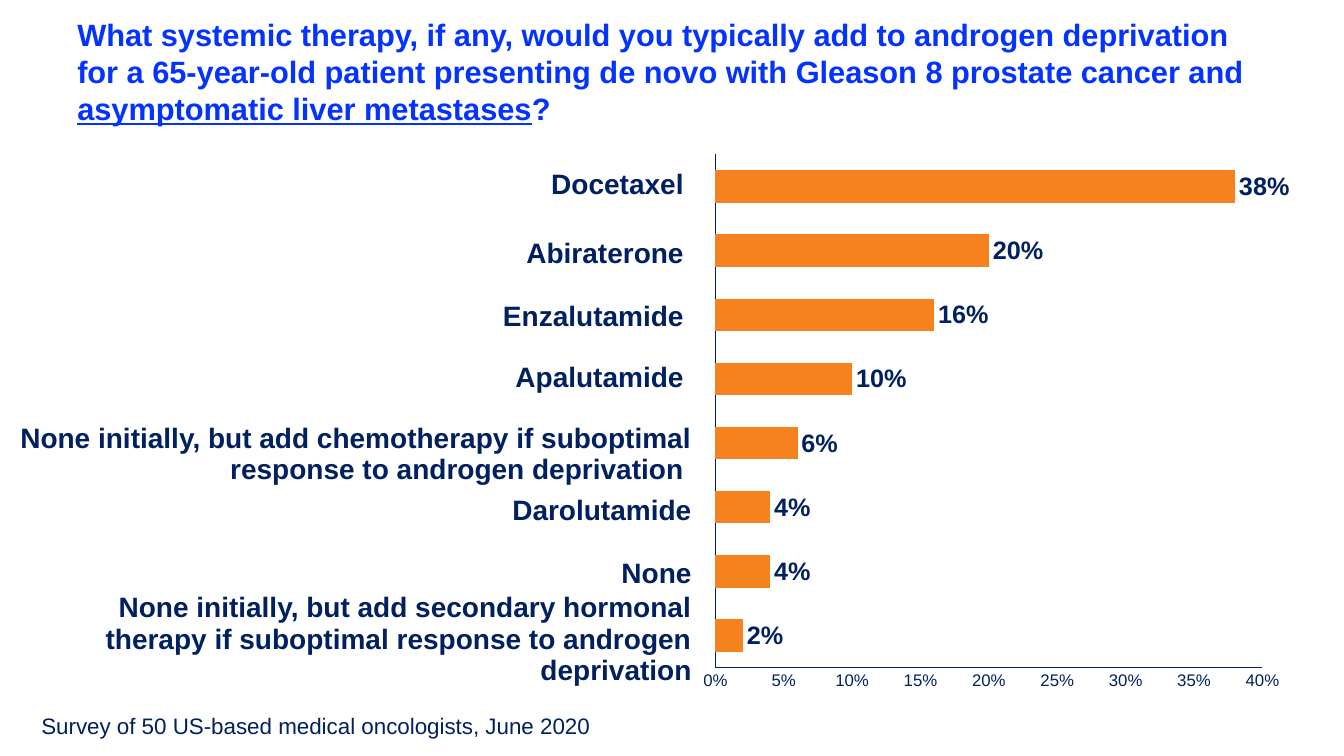
from lxml import etree
from pptx import Presentation
from pptx import util as u
from pptx.chart.data import CategoryChartData
from pptx.dml.color import RGBColor
from pptx.enum import chart as charts, text
from pptx.oxml.ns import qn

NAVY, BLUE, ORANGE, WHITE = "002060", "0432FF", "F6821F", "FFFFFF"


def style(font, size, color, bold=False):
    font.name = "Arial"
    font.size = u.Pt(size)
    font.bold = bold
    font.color.rgb = RGBColor.from_string(color)


def add_label(words, left, middle, width, size, bold, align, spacing=None):
    height = 16
    box = page.shapes.add_textbox(u.Pt(left), u.Pt(middle - height / 2), u.Pt(width), u.Pt(height))
    frame = box.text_frame
    frame.word_wrap = True
    frame.vertical_anchor = text.MSO_ANCHOR.MIDDLE
    frame.margin_left = frame.margin_right = frame.margin_top = frame.margin_bottom = 0
    para = frame.paragraphs[0]
    para.alignment = align
    if spacing:
        para.line_spacing = u.Pt(spacing)
    span = para.add_run()
    span.text = words
    style(span.font, size, NAVY, bold)


deck = Presentation()
deck.slide_width, deck.slide_height = u.Pt(960), u.Pt(540)
page = deck.slides.add_slide(deck.slide_layouts[5])

title = page.shapes.title
title.left, title.top, title.width, title.height = u.Pt(48), u.Pt(6), u.Pt(870), u.Pt(90)
title.text_frame.word_wrap = True
title.text_frame.auto_size = text.MSO_AUTO_SIZE.NONE
title.text_frame.vertical_anchor = text.MSO_ANCHOR.MIDDLE
para = title.text_frame.paragraphs[0]
para.alignment = text.PP_ALIGN.LEFT
for words, underline in [
    ("What systemic therapy, if any, would you typically add to androgen deprivation for a "
     "65-year-old patient presenting de novo with Gleason 8 prostate cancer and ", False),
    ("asymptomatic liver metastases", True),
    ("?", False),
]:
    span = para.add_run()
    span.text = words
    style(span.font, 22, BLUE, True)
    span.font.underline = underline

answers = [
    ("Docetaxel ", 0.38, 131, 48, None),
    ("Abiraterone ", 0.20, 180, 48, None),
    ("Enzalutamide ", 0.16, 225.5, 48, None),
    ("Apalutamide ", 0.10, 268.5, 48, None),
    ("None initially, but add chemotherapy if suboptimal response to androgen deprivation ",
     0.06, 324.5, 12, 22.4),
    ("Darolutamide", 0.04, 363.5, 48, None),
    ("None", 0.04, 409, 48, None),
    ("None initially, but add secondary hormonal therapy if suboptimal response to androgen deprivation",
     0.02, 456.5, 60, 22.4),
]

data = CategoryChartData(number_format="0%")
data.categories = [""] * len(answers)
data.add_series("Series 1", [answer[1] for answer in reversed(answers)])
chart = page.shapes.add_chart(charts.XL_CHART_TYPE.BAR_CLUSTERED,
                              u.Pt(480), u.Pt(98), u.Pt(444), u.Pt(412), data).chart
chart.has_legend = False
chart.has_title = False
style(chart.font, 10, WHITE)

plot = chart.plots[0]
plot.vary_by_categories = False
plot.gap_width = 98
plot.overlap = -19
series = plot.series[0]
series.format.fill.solid()
series.format.fill.fore_color.rgb = RGBColor.from_string(ORANGE)
plot.has_data_labels = True
labels = plot.data_labels
labels.show_value = True
labels.number_format = "0%"
labels.number_format_is_linked = False
labels.position = charts.XL_LABEL_POSITION.OUTSIDE_END
style(labels.font, 18, NAVY, True)

for axis, color in [(chart.category_axis, WHITE), (chart.value_axis, NAVY)]:
    axis.has_major_gridlines = False
    axis.major_tick_mark = axis.minor_tick_mark = charts.XL_TICK_MARK.NONE
    axis.format.line.color.rgb = RGBColor.from_string(NAVY)
    axis.format.line.width = u.Pt(0.75)
    style(axis.tick_labels.font, 12, color)
scale = chart.value_axis
scale.minimum_scale, scale.maximum_scale, scale.major_unit = 0, 0.4, 0.05
scale.tick_labels.number_format = "0%"
scale.tick_labels.number_format_is_linked = False

plot_area = chart.element.find(".//" + qn("c:plotArea"))
for old in plot_area.findall(qn("c:layout")):
    plot_area.remove(old)
layout = etree.Element(qn("c:layout"))
manual = etree.SubElement(layout, qn("c:manualLayout"))
for tag, value in [("layoutTarget", "inner"), ("xMode", "edge"), ("yMode", "edge"),
                   ("x", "0.07"), ("y", "0.03"), ("w", "0.88"), ("h", "0.89")]:
    etree.SubElement(manual, qn("c:" + tag)).set("val", value)
plot_area.insert(0, layout)

for words, share, middle, left, spacing in answers:
    add_label(words, left, middle, 494 - left, 20, True, text.PP_ALIGN.RIGHT, spacing)
add_label("Survey of 50 US-based medical oncologists, June 2020",
          29.5, 518, 750, 16, False, text.PP_ALIGN.LEFT)

deck.save("out.pptx")
